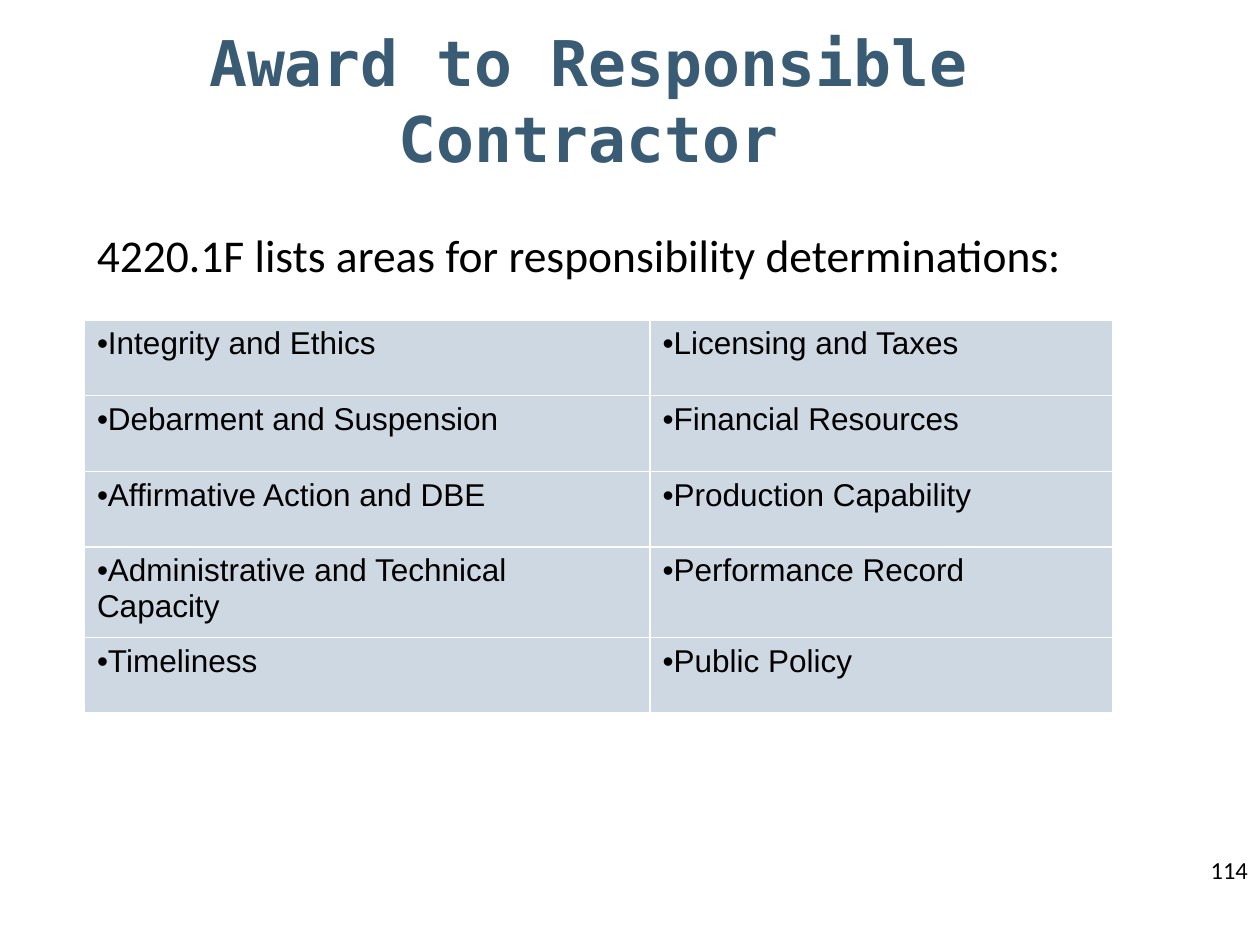
from dataclasses import dataclass

from lxml import etree
from pptx import Presentation
from pptx.dml.color import RGBColor
from pptx.enum.text import MSO_ANCHOR, PP_ALIGN
from pptx.oxml.ns import qn
from pptx.util import Inches, Pt

CENTER = PP_ALIGN.CENTER
LEFT = PP_ALIGN.LEFT
TOP = MSO_ANCHOR.TOP
MIDDLE = MSO_ANCHOR.MIDDLE

BLACK = "000000"
WHITE = "FFFFFF"
NAVY = "395B74"
PALE = "CDD8E2"

AREAS = [
    ("Integrity and Ethics", "Licensing and Taxes"),
    ("Debarment and Suspension", "Financial Resources"),
    ("Affirmative Action and DBE", "Production Capability"),
    ("Administrative and Technical Capacity", "Performance Record"),
    ("Timeliness", "Public Policy"),
]
WIDTHS = [4.49, 3.67]
HEIGHTS = [0.6, 0.6, 0.6, 0.72, 0.6]


@dataclass
class Label:
    text: str
    left: float
    top: float
    width: float
    height: float
    size: float
    face: str = "Calibri"
    color: str = BLACK
    bold: bool = False
    align: PP_ALIGN = LEFT
    anchor: MSO_ANCHOR = TOP
    hang: float = 0


LABELS = [
    Label("114", 9.51, 6.74, 0.58, 0.77, 14),
    Label("Award to Responsible Contractor", 0.67, 0.25, 8, 1.08, 36,
          "DejaVu Sans Mono", NAVY, True, CENTER, MIDDLE),
    Label("4220.1F lists areas for responsibility determinations:",
          0.67, 1.75, 8, 4.92, 26, hang=0.38),
]


def paint(color: str) -> RGBColor:
    return RGBColor.from_string(color)


def style(para, face: str, size: float, color: str, bold: bool = False) -> None:
    for run in para.runs:
        run.font.name = face
        run.font.size = Pt(size)
        run.font.bold = bold
        run.font.color.rgb = paint(color)


def add_label(slide, label: Label) -> None:
    box = slide.shapes.add_textbox(Inches(label.left), Inches(label.top),
                                   Inches(label.width), Inches(label.height))
    frame = box.text_frame
    frame.word_wrap = True
    frame.vertical_anchor = label.anchor
    frame.text = label.text
    para = frame.paragraphs[0]
    para.alignment = label.align
    if label.hang:
        props = para._p.get_or_add_pPr()
        props.set("marL", str(Inches(label.hang)))
        props.set("indent", str(-Inches(label.hang)))
    style(para, label.face, label.size, label.color, label.bold)


def add_edges(cell, color: str, width: float) -> None:
    """Draw the four borders of a cell."""
    props = cell._tc.get_or_add_tcPr()
    for side in ("lnL", "lnR", "lnT", "lnB"):
        line = etree.SubElement(props, qn(f"a:{side}"), w=str(Pt(width)))
        fill = etree.SubElement(line, qn("a:solidFill"))
        etree.SubElement(fill, qn("a:srgbClr"), val=color)


def add_bullet(para, face: str) -> None:
    props = para._p.get_or_add_pPr()
    props.set("marL", "0")
    props.set("indent", "0")
    etree.SubElement(props, qn("a:buFont"), typeface=face)
    etree.SubElement(props, qn("a:buChar"), char="•")


def fill_cell(cell, text: str) -> None:
    add_edges(cell, WHITE, 1)
    cell.fill.solid()
    cell.fill.fore_color.rgb = paint(PALE)
    cell.text_frame.text = text
    para = cell.text_frame.paragraphs[0]
    add_bullet(para, "Arial")
    style(para, "Arial", 18, BLACK)


def add_areas(slide) -> None:
    frame = slide.shapes.add_table(len(AREAS), len(WIDTHS), Inches(0.67), Inches(2.54),
                                   Inches(sum(WIDTHS)), Inches(sum(HEIGHTS)))
    table = frame.table
    table.first_row = False
    table.horz_banding = False
    for col, width in zip(table.columns, WIDTHS):
        col.width = Inches(width)
    for row, height, texts in zip(table.rows, HEIGHTS, AREAS):
        row.height = Inches(height)
        for cell, text in zip(row.cells, texts):
            fill_cell(cell, text)


def main() -> None:
    deck = Presentation()
    deck.slide_width = Inches(10)
    deck.slide_height = Inches(7.5)
    slide = deck.slides.add_slide(deck.slide_layouts[6])
    for label in LABELS:
        add_label(slide, label)
    add_areas(slide)
    deck.save("out.pptx")


if __name__ == "__main__":
    main()
